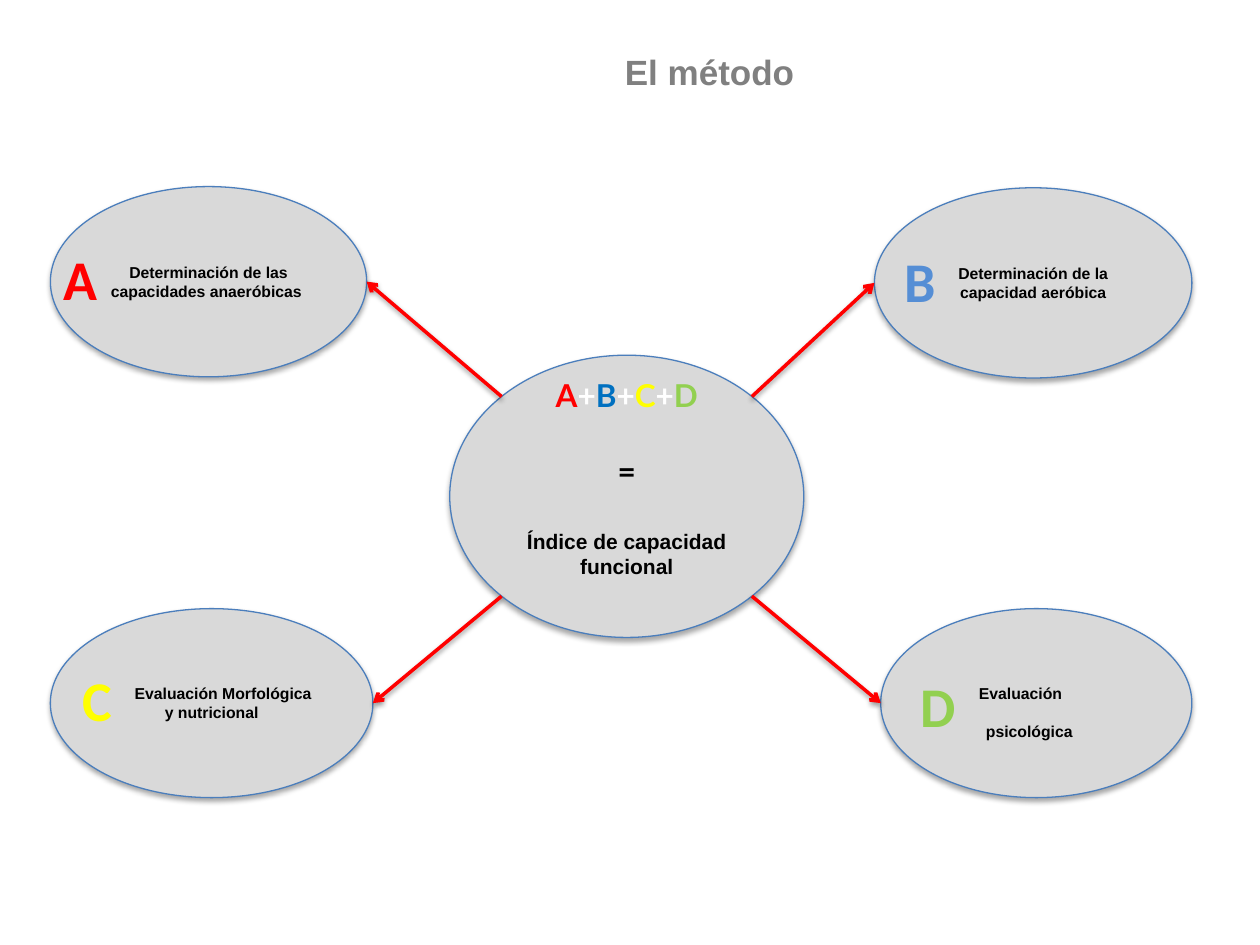
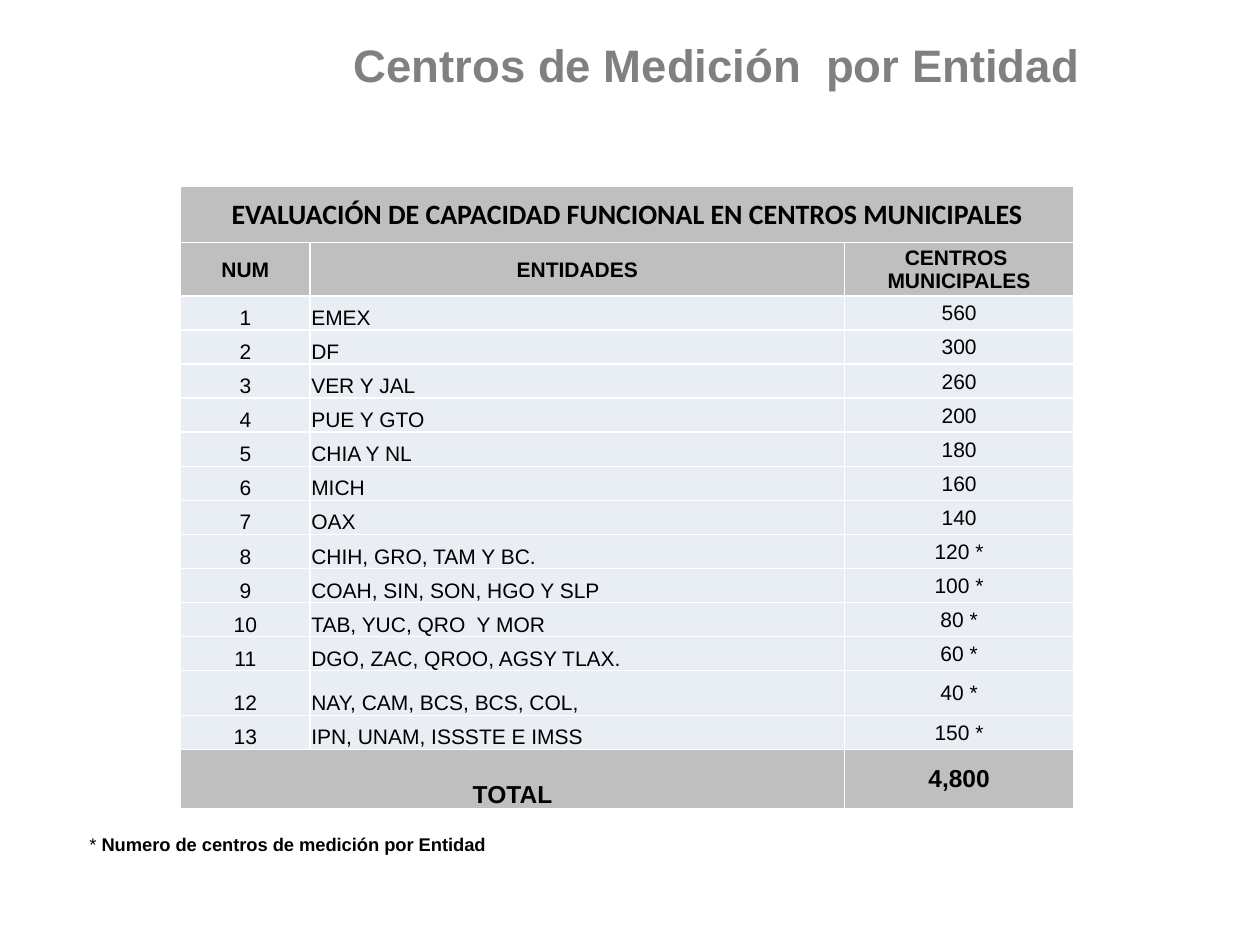
from math import cos, pi

from lxml.etree import SubElement
from pptx import Presentation
from pptx.dml.color import RGBColor
from pptx.enum.shapes import MSO_CONNECTOR as Connector, MSO_SHAPE as Shape
from pptx.enum.text import MSO_ANCHOR as Anchor, PP_ALIGN as Align
from pptx.oxml.ns import qn
from pptx.util import Pt

GRAY, BLACK, WHITE = "808080", "000000", "FFFFFF"
RED, YELLOW, GREEN = "FF0000", "FFFF00", "92D050"
OVAL_FILL, OVAL_LINE = "D9D9D9", "4B7EBC"
HEAD_FILL, BODY_FILL = "BFBFBF", "E9EDF4"

# Boxes are left, top, width, height in points
METHOD_TITLE = ("El método", (241, 9.4, 329, 62.6), 20)
CENTERS_TITLE = ("Centros de Medición  por Entidad", (194.4, 8.6, 430.6, 56.9), 26)

LABEL = dict(size=9, bold=True, name="Arial")
EVALUATIONS = [
    dict(letter="B", color="558ED5", text="Determinación de la capacidad aeróbica",
         oval=(499.7, 107.3, 181.4, 108.7), letter_box=(509.8, 137.5, 51, 46),
         side=(1, -1), layout=dict(alignment=Align.CENTER)),
    dict(letter="A", color=RED, text="Determinación de las capacidades anaeróbicas\u00a0",
         oval=(28.8, 106.6, 180.7, 108.7), letter_box=(29.5, 136, 30, 46),
         side=(-1, -1), layout=dict(alignment=Align.CENTER)),
    dict(letter="D", color=GREEN, text="Evaluación psicológica",
         oval=(503.3, 347.8, 177.8, 108), letter_box=(519, 380.2, 51, 46),
         side=(1, 1), layout=dict(alignment=Align.LEFT, line_spacing=2.0),
         indents=(27, -4)),
    dict(letter="C", color=YELLOW, text="Evaluación Morfológica y nutricional",
         oval=(28.8, 347.8, 184.3, 108), letter_box=(40.3, 376.6, 45.4, 46),
         side=(-1, 1), layout=dict(alignment=Align.CENTER), indents=(0, 13)),
]
HUB = (257, 203, 202.3, 161.3)
FORMULA = [("A", RED), ("+", WHITE), ("B", "0070C0"), ("+", WHITE),
           ("C", YELLOW), ("+", WHITE), ("D", GREEN)]
RESULT = "Índice de capacidad funcional"
HUB_GAP = 22

TABLE_HEADING = "EVALUACIÓN DE CAPACIDAD FUNCIONAL EN CENTROS MUNICIPALES"
COLUMN_HEADINGS = ("NUM", "ENTIDADES", "CENTROS  MUNICIPALES")
CENTERS = [
    ("EMEX", "560"),
    ("DF", "300"),
    ("VER Y JAL", "260"),
    ("PUE Y GTO", "200"),
    ("CHIA Y NL", "180"),
    ("MICH", "160"),
    ("OAX", "140"),
    ("CHIH, GRO, TAM Y BC.", "120 *"),
    ("COAH, SIN, SON, HGO Y SLP", "100 *"),
    ("TAB, YUC, QRO  Y MOR", "80 *"),
    ("DGO, ZAC, QROO, AGSY TLAX.", "60 *"),
    ("NAY, CAM, BCS, BCS, COL,", "40 *"),
    ("IPN, UNAM, ISSSTE E IMSS", "150 *"),
]
TOTAL = ("TOTAL", "4,800")
TABLE_BOX = (103.2, 106.6, 510.4, 356.2)
COLUMN_WIDTHS = (74, 305.4, 131)
ROW_HEIGHTS = [32, 30.5] + [19.5] * 11 + [25.5, 19.5, 33.7]
FOOTNOTE = (("* ", False), ("Numero de centros de medición por Entidad", True))
FOOTNOTE_BOX = (44, 472.3, 245, 20)


def rgb(color):
    return RGBColor.from_string(color)


def points(lengths):
    return [Pt(length) for length in lengths]


def assign(target, values):
    for attribute, value in values.items():
        setattr(target, attribute, value)


def add_run(paragraph, text, color=BLACK, size=12, **font):
    run = paragraph.add_run()
    run.text = text
    assign(run.font, dict(size=Pt(size), **font))
    run.font.color.rgb = rgb(color)


def add_shadow(properties, opacity, distance):
    """Put a soft downward shadow in the effect list of a shape."""
    effects = properties.find(qn("a:effectLst"))
    if effects is None:
        effects = SubElement(properties, qn("a:effectLst"))
    shadow = SubElement(effects, qn("a:outerShdw"), blurRad=str(Pt(3.1)),
                        dist=str(Pt(distance)), dir="5400000", rotWithShape="0")
    black = SubElement(shadow, qn("a:srgbClr"), val=BLACK)
    SubElement(black, qn("a:alpha"), val=str(opacity * 1000))


def add_titled_slide(deck, text, box, size):
    slide = deck.slides.add_slide(deck.slide_layouts[5])
    title = slide.shapes.title
    assign(title, dict(zip(("left", "top", "width", "height"), points(box))))
    title.text_frame.vertical_anchor = Anchor.MIDDLE
    heading = title.text_frame.paragraphs[0]
    heading.alignment = Align.CENTER
    add_run(heading, text, GRAY, size, bold=True, name="Arial")
    return slide


def add_oval(slide, box):
    oval = slide.shapes.add_shape(Shape.OVAL, *points(box))
    oval.shadow.inherit = False
    oval.fill.solid()
    oval.fill.fore_color.rgb = rgb(OVAL_FILL)
    oval.line.color.rgb = rgb(OVAL_LINE)
    oval.line.width = Pt(0.75)
    add_shadow(oval._element.spPr, 35, 1.8)
    assign(oval.text_frame, dict(word_wrap=True, vertical_anchor=Anchor.MIDDLE))
    return oval.text_frame


def add_evaluation(slide, evaluation):
    label = add_oval(slide, evaluation["oval"]).paragraphs[0]
    assign(label, evaluation["layout"])
    if "indents" in evaluation:
        margin, first_line = points(evaluation["indents"])
        label_format = label._p.get_or_add_pPr()
        label_format.set("marL", str(margin))
        label_format.set("indent", str(first_line))
    add_run(label, evaluation["text"], **LABEL)


def add_letter(slide, evaluation):
    frame = slide.shapes.add_textbox(*points(evaluation["letter_box"])).text_frame
    frame.word_wrap = True
    add_run(frame.paragraphs[0], evaluation["letter"], evaluation["color"], 32,
            bold=True, name="Calibri")


def add_hub(slide):
    frame = add_oval(slide, HUB)
    frame.margin_bottom = Pt(3.6 + HUB_GAP)
    formula, equals, result = (frame.paragraphs[0], frame.add_paragraph(),
                               frame.add_paragraph())
    for line in (formula, equals, result):
        line.alignment = Align.CENTER
    for line in (equals, result):
        line.space_before = Pt(HUB_GAP)
    for text, color in FORMULA:
        add_run(formula, text, color, 18, bold=True, name="Lato")
    add_run(equals, "=", size=18, bold=True, name="Lato")
    add_run(result, RESULT, bold=True, name="Arial")


def add_arrow(slide, oval, side):
    """Join the hub's diagonal point to the facing side of an oval."""
    hub_left, hub_top, hub_width, hub_height = HUB
    left, top, width, height = oval
    across, down = side
    start = (hub_left + hub_width / 2 * (1 + across * cos(pi / 4)),
             hub_top + hub_height / 2 * (1 + down * cos(pi / 4)))
    end = (left if across > 0 else left + width, top + height / 2)
    arrow = slide.shapes.add_connector(Connector.STRAIGHT, *points(start + end))
    arrow.line.color.rgb = rgb(RED)
    arrow.line.width = Pt(2)
    SubElement(arrow.line._get_or_add_ln(), qn("a:tailEnd"), type="arrow")
    add_shadow(arrow._element.spPr, 38, 1.6)


def build_method(deck):
    slide = add_titled_slide(deck, *METHOD_TITLE)
    for evaluation in EVALUATIONS:
        add_evaluation(slide, evaluation)
    for evaluation in EVALUATIONS:
        add_letter(slide, evaluation)
    add_hub(slide)
    for evaluation in EVALUATIONS:
        add_arrow(slide, evaluation["oval"], evaluation["side"])


def fill_cell(cell, text, fill=HEAD_FILL, anchor=Anchor.MIDDLE,
              align=Align.CENTER, size=12, bold=True, name="Arial"):
    assign(cell, dict(margin_left=Pt(0.7), margin_right=Pt(0.7), margin_top=Pt(0.7),
                      margin_bottom=0, vertical_anchor=anchor))
    paragraph = cell.text_frame.paragraphs[0]
    paragraph.alignment = align
    if text:
        add_run(paragraph, text, size=size, bold=bold, name=name)
    for edge in ("lnL", "lnR", "lnT", "lnB"):
        border = SubElement(cell._tc.get_or_add_tcPr(), qn(f"a:{edge}"), w=str(Pt(1)))
        SubElement(SubElement(border, qn("a:solidFill")), qn("a:srgbClr"), val=WHITE)
    cell.fill.solid()
    cell.fill.fore_color.rgb = rgb(fill)


def add_centers_table(slide):
    table = slide.shapes.add_table(len(ROW_HEIGHTS), len(COLUMN_WIDTHS),
                                   *points(TABLE_BOX)).table
    assign(table, dict(first_row=False, horz_banding=False))
    for column, width in zip(table.columns, COLUMN_WIDTHS):
        column.width = Pt(width)
    for row, height in zip(table.rows, ROW_HEIGHTS):
        row.height = Pt(height)

    last = len(ROW_HEIGHTS) - 1
    table.cell(0, 0).merge(table.cell(0, 2))
    table.cell(last, 0).merge(table.cell(last, 1))
    for column, text in enumerate((TABLE_HEADING, "", "")):
        fill_cell(table.cell(0, column), text, size=16, name="Calibri")
    for column, text in enumerate(COLUMN_HEADINGS):
        fill_cell(table.cell(1, column), text)

    body = dict(fill=BODY_FILL, bold=False)
    for number, (entity, count) in enumerate(CENTERS, start=1):
        row = number + 1
        fill_cell(table.cell(row, 0), str(number), anchor=Anchor.BOTTOM, **body)
        fill_cell(table.cell(row, 1), entity, anchor=Anchor.BOTTOM,
                  align=Align.LEFT, **body)
        fill_cell(table.cell(row, 2), count, **body)

    total_label, total_count = TOTAL
    fill_cell(table.cell(last, 0), total_label, anchor=Anchor.BOTTOM, size=14)
    fill_cell(table.cell(last, 1), "")
    fill_cell(table.cell(last, 2), total_count, size=14)


def build_centers(deck):
    slide = add_titled_slide(deck, *CENTERS_TITLE)
    add_centers_table(slide)
    footnote = slide.shapes.add_textbox(*points(FOOTNOTE_BOX)).text_frame
    footnote.word_wrap = False
    for text, bold in FOOTNOTE:
        add_run(footnote.paragraphs[0], text, size=10.5, bold=bold, name="Arial")


def main():
    deck = Presentation()
    assign(deck, dict(slide_width=Pt(720), slide_height=Pt(540)))
    build_method(deck)
    build_centers(deck)
    deck.save("out.pptx")


if __name__ == "__main__":
    main()
